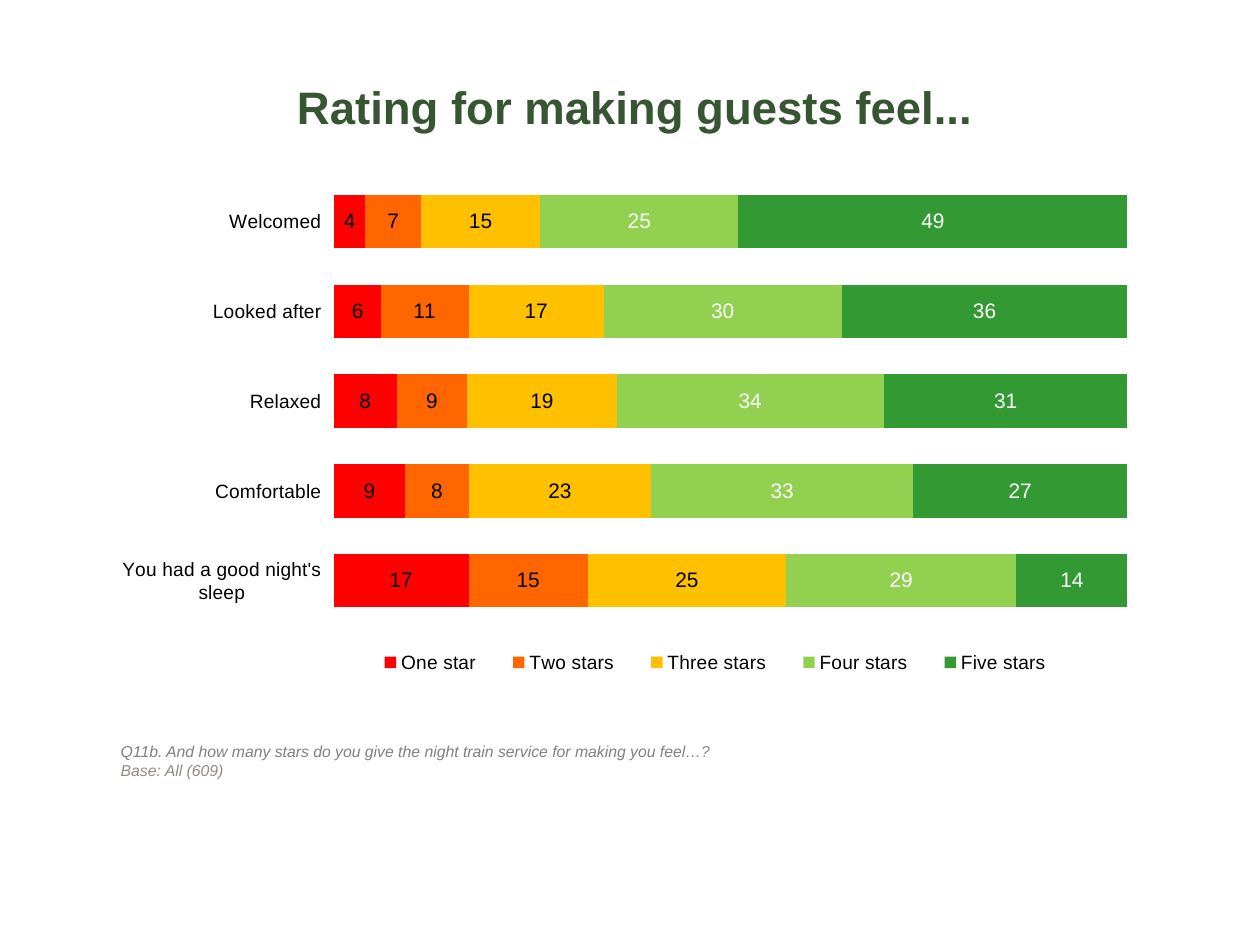
"""Build a slide with a stacked bar chart of guest star ratings."""
from dataclasses import dataclass

from lxml import etree
from pptx import Presentation
from pptx.chart.data import CategoryChartData
from pptx.dml.color import RGBColor
from pptx.enum.chart import XL_CHART_TYPE, XL_LEGEND_POSITION, XL_TICK_MARK
from pptx.enum.text import MSO_ANCHOR, MSO_AUTO_SIZE, PP_ALIGN
from pptx.oxml.ns import qn
from pptx.util import Inches, Pt


@dataclass(frozen=True)
class Theme:
    font: str = "Arial"
    title: str = "375533"
    question: str = "808080"
    base: str = "928B81"
    black: str = "000000"
    white: str = "FFFFFF"
    title_size: int = 26
    chart_size: int = 18
    label_size: int = 12
    axis_size: int = 11
    note_size: int = 9


theme = Theme()


def add_text(paragraph, text, *, size, color, bold=False, italic=False):
    run = paragraph.add_run()
    run.text = text
    run.font.name = theme.font
    run.font.size = Pt(size)
    run.font.bold = bold
    run.font.italic = italic
    run.font.color.rgb = RGBColor.from_string(color)


def set_layout(parent, index, **settings):
    for old_layout in parent.findall(qn("c:layout")):
        parent.remove(old_layout)
    layout = etree.Element(qn("c:layout"))
    manual = etree.SubElement(layout, qn("c:manualLayout"))
    for name, value in settings.items():
        etree.SubElement(manual, qn(f"c:{name}")).set("val", str(value))
    parent.insert(index, layout)


presentation = Presentation()
presentation.slide_width = Inches(10)
presentation.slide_height = Inches(7.5)
slide = presentation.slides.add_slide(presentation.slide_layouts[5])

categories = ["Welcomed", "Looked after", "Relaxed", "Comfortable", "You had a good night's sleep"]
ratings = [
    ("One star", (4, 6, 8, 9, 17), "FF0000", theme.black),
    ("Two stars", (7, 11, 9, 8, 15), "FF6600", theme.black),
    ("Three stars", (15, 17, 19, 23, 25), "FFC000", theme.black),
    ("Four stars", (25, 30, 34, 33, 29), "92D050", theme.white),
    ("Five stars", (49, 36, 31, 27, 14), "339933", theme.white),
]
chart_data = CategoryChartData()
chart_data.categories = categories
for name, values, fill_color, label_color in ratings:
    chart_data.add_series(name, values)

chart = slide.shapes.add_chart(
    XL_CHART_TYPE.BAR_STACKED_100,
    Inches(0.97), Inches(0.72), Inches(8.14), Inches(4.88), chart_data,
).chart
chart.has_title = False
chart.font.name = theme.font
chart.font.size = Pt(theme.chart_size)
chart.font.color.rgb = RGBColor.from_string(theme.black)

plot = chart.plots[0]
plot.gap_width = 68
plot.overlap = 100
plot.vary_by_categories = False
for series, (name, values, fill_color, label_color) in zip(plot.series, ratings):
    series.format.fill.solid()
    series.format.fill.fore_color.rgb = RGBColor.from_string(fill_color)
    labels = series.data_labels
    labels.show_value = True
    labels.font.name = theme.font
    labels.font.size = Pt(theme.label_size)
    labels.font.color.rgb = RGBColor.from_string(label_color)

category_axis = chart.category_axis
category_axis.reverse_order = True
category_axis.major_tick_mark = XL_TICK_MARK.OUTSIDE
category_axis.format.line.fill.background()
category_axis.tick_labels.font.name = theme.font
category_axis.tick_labels.font.size = Pt(theme.axis_size)
chart.value_axis.has_major_gridlines = False
chart.value_axis.visible = False

chart.has_legend = True
legend = chart.legend
legend.position = XL_LEGEND_POSITION.BOTTOM
legend.include_in_layout = False
legend.font.name = theme.font
legend.font.size = Pt(theme.axis_size)

plot_area = chart.element.find(f".//{qn('c:plotArea')}")
set_layout(plot_area, 0, layoutTarget="inner", xMode="edge", yMode="edge",
           x=0.2, y=0.14, w=0.78, h=0.73)
legend_element = chart.element.find(f".//{qn('c:legend')}")
set_layout(legend_element, 1, xMode="edge", yMode="edge", x=0.22, y=0.9, w=0.71, h=0.06)

title = slide.shapes.title
title.left, title.top = Inches(0.64), Inches(0.51)
title.width, title.height = Inches(8.8), Inches(0.66)
title_frame = title.text_frame
title_frame.auto_size = MSO_AUTO_SIZE.NONE
title_frame.vertical_anchor = MSO_ANCHOR.MIDDLE
title_frame.paragraphs[0].alignment = PP_ALIGN.CENTER
add_text(title_frame.paragraphs[0], "Rating for making guests feel...",
         size=theme.title_size, color=theme.title, bold=True)

note_frame = slide.shapes.add_textbox(
    Inches(0.86), Inches(5.84), Inches(7.73), Inches(0.4)).text_frame
note_frame.word_wrap = True
question = note_frame.paragraphs[0]
add_text(question, "Q11b. And how many stars do you give the night train service for making you feel…",
         size=theme.note_size, color=theme.question, italic=True)
add_text(question, "?", size=theme.note_size, color=theme.base, italic=True)
add_text(note_frame.add_paragraph(), "Base: All (609)",
         size=theme.note_size, color=theme.base, italic=True)

presentation.save("out.pptx")
